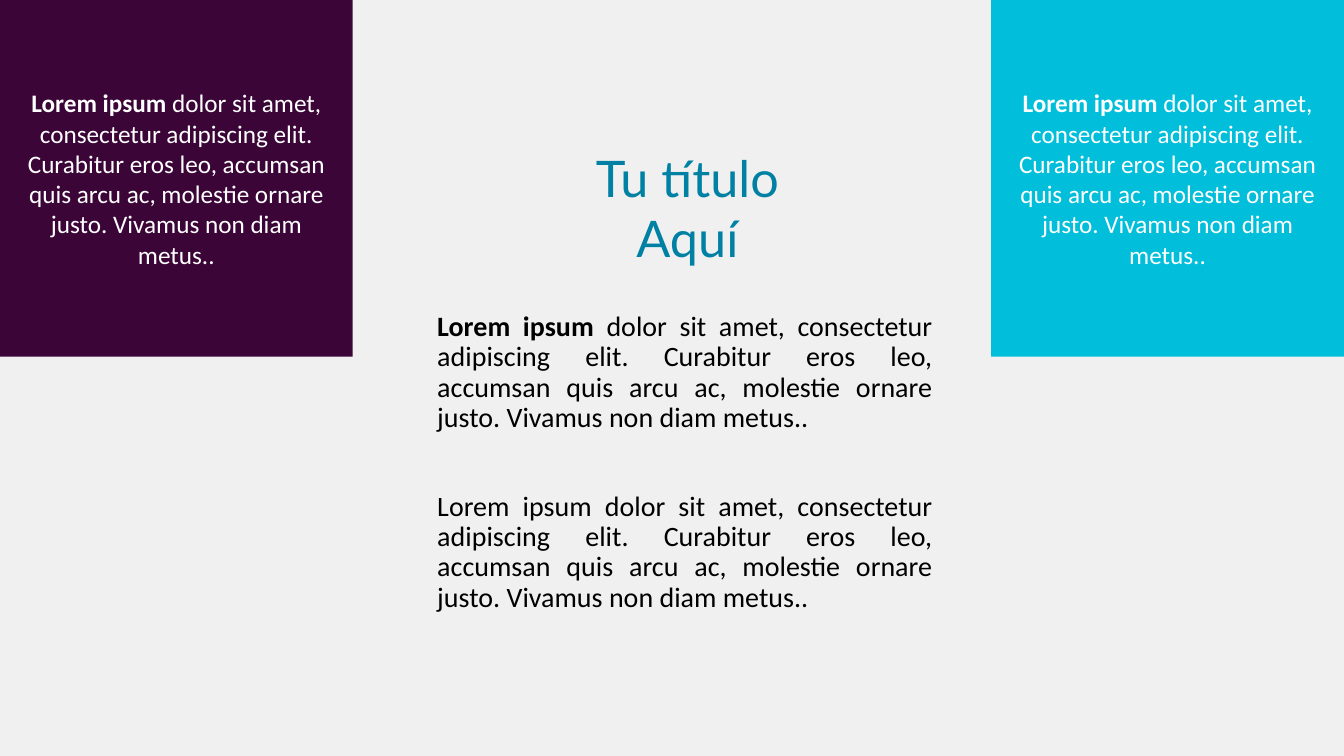
from dataclasses import dataclass

from pptx import Presentation
from pptx.dml.color import RGBColor
from pptx.enum.shapes import MSO_SHAPE
from pptx.enum.text import MSO_ANCHOR, MSO_AUTO_SIZE, PP_ALIGN
from pptx.slide import Slide
from pptx.text.text import _Paragraph as Paragraph
from pptx.util import Cm, Pt

BACKGROUND = RGBColor(0xF0, 0xF0, 0xF0)
PURPLE = RGBColor(0x3B, 0x05, 0x38)
TURQUOISE = RGBColor(0x01, 0xBF, 0xDA)
TITLE_BLUE = RGBColor(0x00, 0x81, 0xA4)
WHITE = RGBColor(0xFF, 0xFF, 0xFF)
BLACK = RGBColor(0x00, 0x00, 0x00)

SLIDE_WIDTH = 33.87
SLIDE_HEIGHT = 19.05
PANEL_WIDTH = 8.89
PANEL_HEIGHT = 8.99
BODY_TOP = 7.75

LEAD = "Lorem ipsum "
REMAINDER = (
    "dolor sit amet, consectetur adipiscing elit. Curabitur eros leo, "
    "accumsan quis arcu ac, molestie ornare justo. Vivamus non diam metus.."
)


@dataclass(frozen=True)
class Panel:
    left: float
    color: RGBColor


@dataclass(frozen=True)
class BodyParagraph:
    bold_lead: bool
    space_before: float


PANELS = [Panel(0, PURPLE), Panel(SLIDE_WIDTH - PANEL_WIDTH, TURQUOISE)]
BODY = [BodyParagraph(True, 10), BodyParagraph(False, 42)]


def write_lorem(
    paragraph: Paragraph, size: float, color: RGBColor, bold_lead: bool
) -> None:
    for text, bold in ((LEAD, bold_lead), (REMAINDER, False)):
        run = paragraph.add_run()
        run.text = text
        run.font.name = "Calibri"
        run.font.size = Pt(size)
        run.font.bold = bold
        run.font.color.rgb = color


def draw_panel(slide: Slide, panel: Panel) -> None:
    shape = slide.shapes.add_shape(
        MSO_SHAPE.RECTANGLE, Cm(panel.left), 0, Cm(PANEL_WIDTH), Cm(PANEL_HEIGHT)
    )
    shape.shadow.inherit = False
    shape.fill.solid()
    shape.fill.fore_color.rgb = panel.color
    shape.line.fill.background()
    text_frame = shape.text_frame
    text_frame.word_wrap = True
    text_frame.vertical_anchor = MSO_ANCHOR.MIDDLE
    paragraph = text_frame.paragraphs[0]
    paragraph.alignment = PP_ALIGN.CENTER
    write_lorem(paragraph, 18, WHITE, True)


def draw_body(slide: Slide) -> None:
    shape = slide.shapes.add_textbox(
        Cm(10.77), Cm(BODY_TOP), Cm(12.98), Cm(SLIDE_HEIGHT - BODY_TOP)
    )
    text_frame = shape.text_frame
    text_frame.word_wrap = True
    for index, item in enumerate(BODY):
        paragraph = text_frame.add_paragraph() if index else text_frame.paragraphs[0]
        paragraph.alignment = PP_ALIGN.JUSTIFY
        paragraph.line_spacing = 0.9
        paragraph.space_before = Pt(item.space_before)
        write_lorem(paragraph, 20, BLACK, item.bold_lead)


def draw_title(slide: Slide) -> None:
    title = slide.shapes.title
    title.left, title.top = Cm(10.29), Cm(3.58)
    title.width, title.height = Cm(14.07), Cm(3.33)
    text_frame = title.text_frame
    text_frame.text = "Tu título\nAquí"
    text_frame.word_wrap = True
    text_frame.auto_size = MSO_AUTO_SIZE.SHAPE_TO_FIT_TEXT
    text_frame.vertical_anchor = MSO_ANCHOR.TOP
    for paragraph in text_frame.paragraphs:
        paragraph.alignment = PP_ALIGN.CENTER
        font = paragraph.runs[0].font
        font.name = "Lato"
        font.size = Pt(36)
        font.color.rgb = TITLE_BLUE


def main() -> None:
    presentation = Presentation()
    presentation.slide_width = Cm(SLIDE_WIDTH)
    presentation.slide_height = Cm(SLIDE_HEIGHT)
    slide = presentation.slides.add_slide(presentation.slide_layouts[5])
    slide.background.fill.solid()
    slide.background.fill.fore_color.rgb = BACKGROUND
    for panel in PANELS:
        draw_panel(slide, panel)
    draw_body(slide)
    draw_title(slide)
    presentation.save("out.pptx")


if __name__ == "__main__":
    main()
